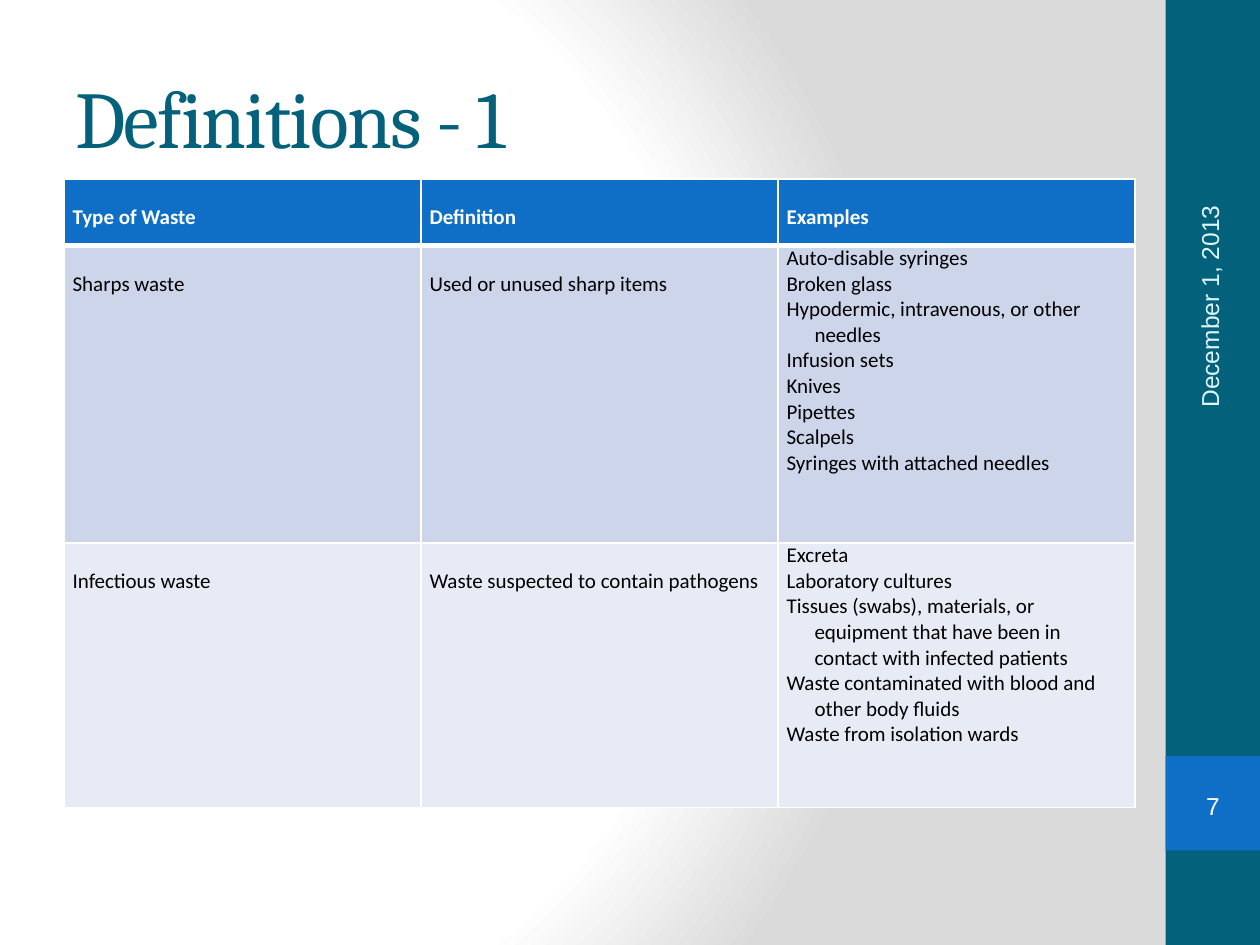
"""Build the 'Definitions - 1' slide about types of health care waste."""
from dataclasses import dataclass

from lxml import etree
from pptx import Presentation
from pptx.dml.color import RGBColor
from pptx.enum.shapes import MSO_SHAPE
from pptx.enum.text import MSO_ANCHOR, PP_ALIGN
from pptx.oxml import parse_xml
from pptx.oxml.ns import qn
from pptx.util import Pt

RECT, BRACKETS = MSO_SHAPE.RECTANGLE, MSO_SHAPE.DOUBLE_BRACKET
MIDDLE, CENTER = MSO_ANCHOR.MIDDLE, PP_ALIGN.CENTER
A_NS = "http://schemas.openxmlformats.org/drawingml/2006/main"
P_NS = "http://schemas.openxmlformats.org/presentationml/2006/main"


@dataclass(frozen=True)
class Theme:
    teal: str = "04617B"
    blue: str = "0F6FC6"
    white: str = "FFFFFF"
    black: str = "000000"
    pale: str = "DBF5F9"
    gray: str = "DADADA"
    bands: tuple = ("CCD5EA", "E7EBF5")
    title_size: float = 46
    side_size: float = 14
    table_size: float = 12


@dataclass(frozen=True)
class Box:
    left: float
    top: float
    width: float
    height: float

    def lengths(self) -> list:
        return [Pt(v) for v in (self.left, self.top, self.width, self.height)]


@dataclass(frozen=True)
class Waste:
    kind: str
    definition: str
    examples: tuple


THEME = Theme()
HEADINGS = ("Type of Waste", "Definition", "Examples")
WASTES = (
    Waste("Sharps waste", "Used or unused sharp items", (
        "Auto-disable syringes", "Broken glass",
        "Hypodermic, intravenous, or other needles", "Infusion sets",
        "Knives", "Pipettes", "Scalpels", "Syringes with attached needles")),
    Waste("Infectious waste", "Waste suspected to contain pathogens", (
        "Excreta", "Laboratory cultures",
        "Tissues (swabs), materials, or equipment that have been in contact "
        "with infected patients",
        "Waste contaminated with blood and other body fluids",
        "Waste from isolation wards")),
)
TABLE_BOX = Box(36.5, 102.2, 612, 359.2)
ROW_HEIGHTS = (38.2, 169.8, 151.2)
HANGING = 16


def style(p, font: str, size: float, color: str, bold: bool = False) -> None:
    for r in p.runs:
        r.font.name, r.font.size, r.font.bold = font, Pt(size), bold
        r.font.color.rgb = RGBColor.from_string(color)


def set_background(s) -> None:
    stops = "".join(
        f'<a:gs pos="{pos * 1000}"><a:srgbClr val="{color}"/></a:gs>'
        for pos, color in ((0, THEME.white), (75, THEME.white), (100, THEME.gray)))
    s.element.cSld.insert(0, parse_xml(
        f'<p:bg xmlns:p="{P_NS}" xmlns:a="{A_NS}"><p:bgPr>'
        f'<a:gradFill rotWithShape="1"><a:gsLst>{stops}</a:gsLst><a:path path="circle">'
        '<a:fillToRect l="20000" t="50000" r="100000" b="50000"/></a:path>'
        '</a:gradFill><a:effectLst/></p:bgPr></p:bg>'))


def add_block(s, box: Box, color: str) -> None:
    sp = s.shapes.add_shape(RECT, *box.lengths())
    sp.shadow.inherit = False
    sp.fill.solid()
    sp.fill.fore_color.rgb = RGBColor.from_string(color)
    sp.line.fill.background()


def add_label(s, box: Box, text: str, font: str, size: float, color: str):
    sp = s.shapes.add_textbox(*box.lengths())
    tf = sp.text_frame
    tf.word_wrap, tf.vertical_anchor = True, MIDDLE
    tf.text = text
    style(tf.paragraphs[0], font, size, color)
    return sp


def add_page_number(s, box: Box, number: str) -> None:
    sp = s.shapes.add_shape(BRACKETS, *box.lengths())
    sp.shadow.inherit = False
    sp.adjustments[0] = 0.18
    sp.fill.background()
    sp.line.fill.background()
    tf = sp.text_frame
    tf.margin_left = tf.margin_right = tf.margin_top = tf.margin_bottom = 0
    tf.vertical_anchor = MIDDLE
    tf.text = number
    p = tf.paragraphs[0]
    p.alignment = CENTER
    style(p, "Arial", THEME.side_size, THEME.white)


def set_borders(cell, top: float, bottom: float) -> None:
    tc_pr = cell._tc.get_or_add_tcPr()
    for side, width in (("L", 1), ("R", 1), ("T", top), ("B", bottom)):
        line = etree.SubElement(tc_pr, qn(f"a:ln{side}"), w=str(Pt(width)))
        fill = etree.SubElement(line, qn("a:solidFill"))
        etree.SubElement(fill, qn("a:srgbClr"), val=THEME.white)


def fill_cell(cell, lines: tuple, row: int, hanging: bool) -> None:
    header = row == 0
    cell.margin_left = cell.margin_right = Pt(5)
    cell.margin_top = cell.margin_bottom = 0
    set_borders(cell, 3 if row == 1 else 1, 3 if header else 1)
    cell.fill.solid()
    cell.fill.fore_color.rgb = RGBColor.from_string(
        THEME.blue if header else THEME.bands[row - 1])
    cell.text_frame.text = "\n".join(lines)
    for p in cell.text_frame.paragraphs:
        if hanging:
            p_pr = p._p.get_or_add_pPr()
            p_pr.set("marL", str(Pt(HANGING)))
            p_pr.set("indent", str(-Pt(HANGING)))
        else:
            p.line_spacing = 2.0
        style(p, "Calibri", THEME.table_size,
              THEME.white if header else THEME.black, header)


def add_waste_table(s) -> None:
    rows = [[(h,) for h in HEADINGS]]
    rows += [[(w.kind,), (w.definition,), w.examples] for w in WASTES]
    table = s.shapes.add_table(len(rows), len(HEADINGS), *TABLE_BOX.lengths()).table
    for column in table.columns:
        column.width = Pt(TABLE_BOX.width / len(HEADINGS))
    for i, (cells, height) in enumerate(zip(rows, ROW_HEIGHTS)):
        table.rows[i].height = Pt(height)
        for j, lines in enumerate(cells):
            fill_cell(table.cell(i, j), lines, i, len(lines) > 1)


def main() -> None:
    prs = Presentation()
    prs.slide_width, prs.slide_height = Pt(720), Pt(540)
    s = prs.slides.add_slide(prs.slide_layouts[6])
    set_background(s)
    add_block(s, Box(666, 0, 54, 540), THEME.teal)
    add_block(s, Box(666, 432, 54, 54), THEME.blue)
    title = add_label(s, Box(36, 21.6, 600, 90), "Definitions - 1",
                      "Cambria", THEME.title_size, THEME.teal)
    title.text_frame.paragraphs[0].runs[0].font._element.set("spc", "-100")
    add_waste_table(s)
    date = add_label(s, Box(595, 129.6, 192, 28.8), "December 1, 2013",
                     "Arial", THEME.side_size, THEME.pale)
    date.rotation = 270
    add_page_number(s, Box(671.5, 445, 43.2, 31), "7")
    prs.save("out.pptx")


if __name__ == "__main__":
    main()
